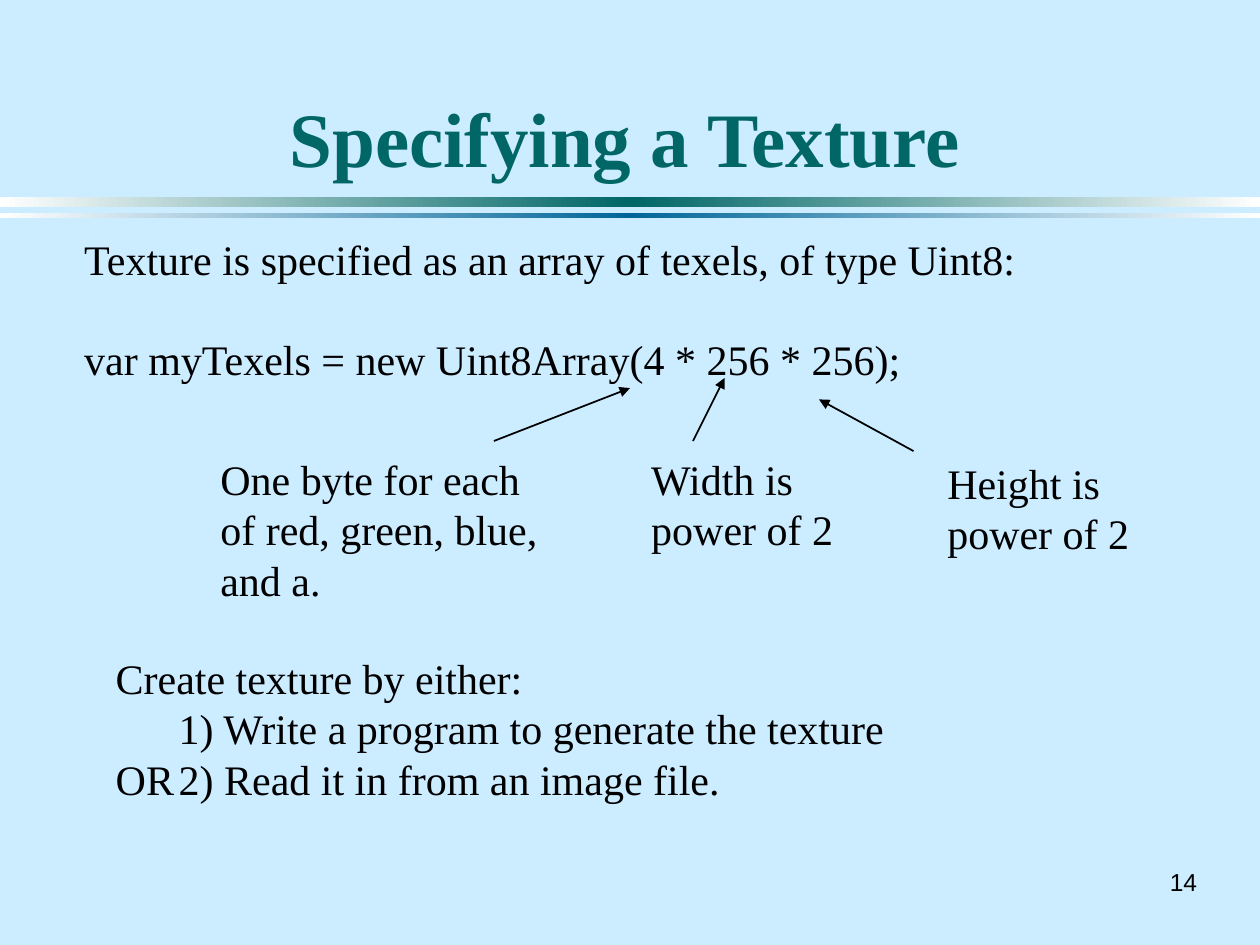
"""Build the slide on specifying a texture as an array of texels."""
from copy import deepcopy

from lxml.etree import SubElement
from pptx import Presentation
from pptx.dml.color import RGBColor
from pptx.enum.shapes import MSO_CONNECTOR as Conn, MSO_SHAPE as Shape
from pptx.enum.text import MSO_ANCHOR as Anchor, PP_ALIGN as Align
from pptx.oxml.ns import qn
from pptx.util import Inches, Pt


def rgb(value):
    return RGBColor.from_string(value)


class Deck:
    font, size, pitch = "Times New Roman", 24, 28.8
    ink, accent, blue, paper = "000000", "006666", "006699", "CCECFF"

    def __init__(self, prs):
        self.s = prs.slides.add_slide(prs.slide_layouts[5])
        fill = self.s.background.fill
        fill.solid()
        fill.fore_color.rgb = rgb(self.paper)

    def style(self, p, size=None, color=None, font=None, bold=False):
        f = p.font
        f.name, f.size, f.bold = font or self.font, Pt(size or self.size), bold
        f.color.rgb = rgb(color or self.ink)

    def title(self, text, x, y, w, h):
        sp = self.s.shapes.title
        sp.left, sp.top, sp.width, sp.height = map(Inches, (x, y, w, h))
        tf = sp.text_frame
        tf.text, tf.vertical_anchor, tf.word_wrap = text, Anchor.BOTTOM, True
        p = tf.paragraphs[0]
        p.alignment = Align.CENTER
        self.style(p, 44, self.accent, bold=True)

    def bar(self, y, h, color):
        sp = self.s.shapes.add_shape(Shape.RECTANGLE, 0, Inches(y), Inches(10), Inches(h))
        sp.shadow.inherit = False
        sp.line.fill.background()
        sp.fill.gradient()
        sp.fill.gradient_angle = 0
        first = sp._element.spPr.find(".//" + qn("a:gs"))
        first.addnext(deepcopy(first))
        for stop, pos, c in zip(sp.fill.gradient_stops, (0, 0.5, 1), ("FFFFFF", color, "FFFFFF")):
            stop.position, stop.color.rgb = pos, rgb(c)

    def text(self, lines, x, y, w, h, wrap=True, gap=0):
        tf = self.s.shapes.add_textbox(*map(Inches, (x, y, w, h))).text_frame
        tf.word_wrap = wrap
        tf.text = "\n".join(lines)
        for i, p in enumerate(tf.paragraphs):
            self.style(p)
            p.line_spacing = Pt(self.pitch)
            p.space_before = Pt(gap if i else 0)

    def number(self, text, x, y, w, h):
        tf = self.s.shapes.add_textbox(*map(Inches, (x, y, w, h))).text_frame
        tf.text, tf.vertical_anchor, tf.word_wrap = text, Anchor.MIDDLE, False
        p = tf.paragraphs[0]
        p.alignment = Align.RIGHT
        self.style(p, 14, font="Arial")

    def arrow(self, x1, y1, x2, y2):
        c = self.s.shapes.add_connector(Conn.STRAIGHT, *map(Inches, (x1, y1, x2, y2)))
        c.line.color.rgb, c.line.width = rgb(self.ink), Pt(1)
        SubElement(c.line._get_or_add_ln(), qn("a:tailEnd"), type="triangle")
        SubElement(c._element.spPr, qn("a:effectLst"))


def main():
    prs = Presentation()
    prs.slide_width, prs.slide_height = Inches(10), Inches(7.5)
    d = Deck(prs)
    d.bar(1.56, 0.08, d.accent)
    d.bar(1.69, 0.04, d.blue)
    d.number("14", 9.17, 6.83, 0.43, 0.33)
    d.title("Specifying a Texture", 0.67, 0.25, 8.58, 1.25)
    d.text(["Texture is specified as an array of texels, of type Uint8:",
            "var myTexels = new Uint8Array(4 * 256 * 256);"],
           0.57, 1.8, 7.66, 1.31, wrap=False, gap=d.pitch)
    callouts = [
        ("One byte for each of red, green, blue, and a.", (1.65, 3.55, 2.85, 1.31), (3.92, 3.5, 5, 3.08)),
        ("Width is power of 2", (5.07, 3.55, 1.93, 0.9), (5.5, 3.5, 5.75, 3)),
        ("Height is power of 2", (7.42, 3.58, 1.93, 0.9), (7.25, 3.58, 6.5, 3.17)),
    ]
    for label, box, ends in callouts:
        d.text([label], *box)
        d.arrow(*ends)
    d.text(["Create texture by either:", "\t1) Write a program to generate the texture",
            "OR\t2) Read it in from an image file."],
           0.82, 5.13, 6.82, 1.3, wrap=False)
    prs.save("out.pptx")


if __name__ == "__main__":
    main()
